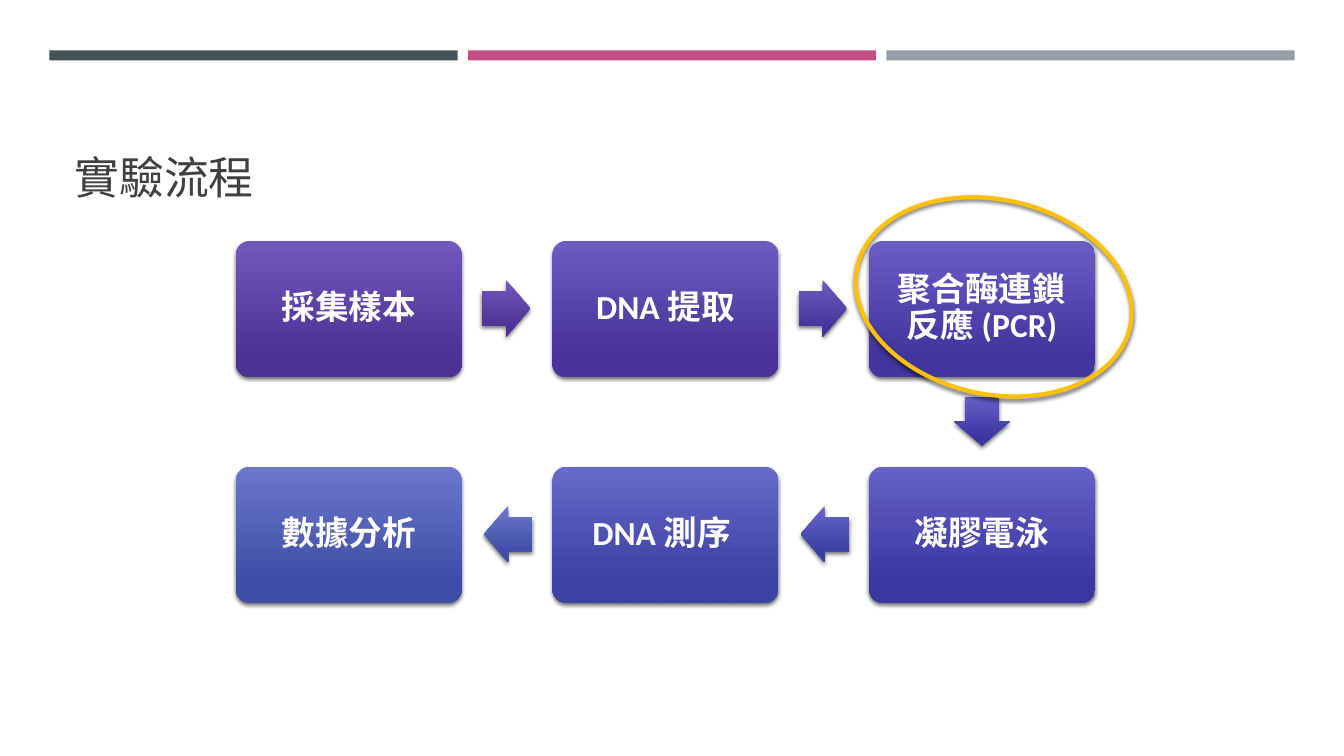
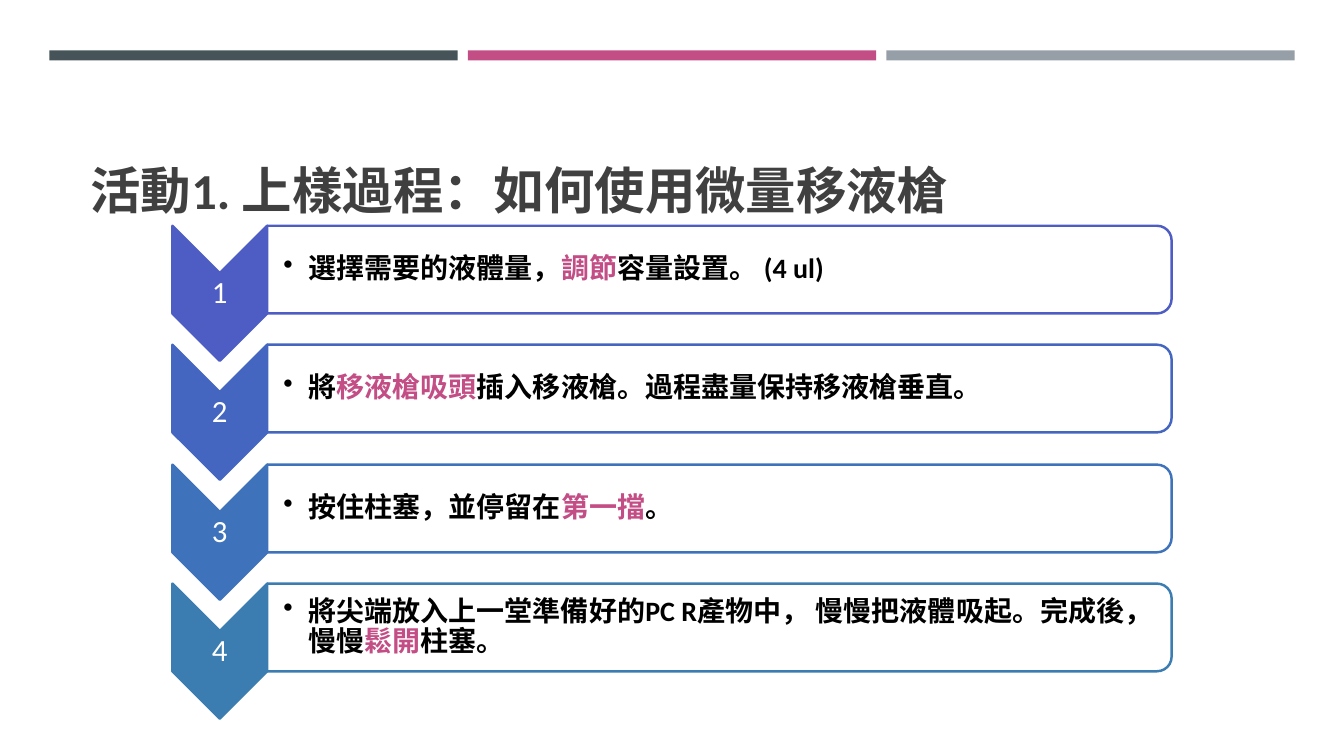
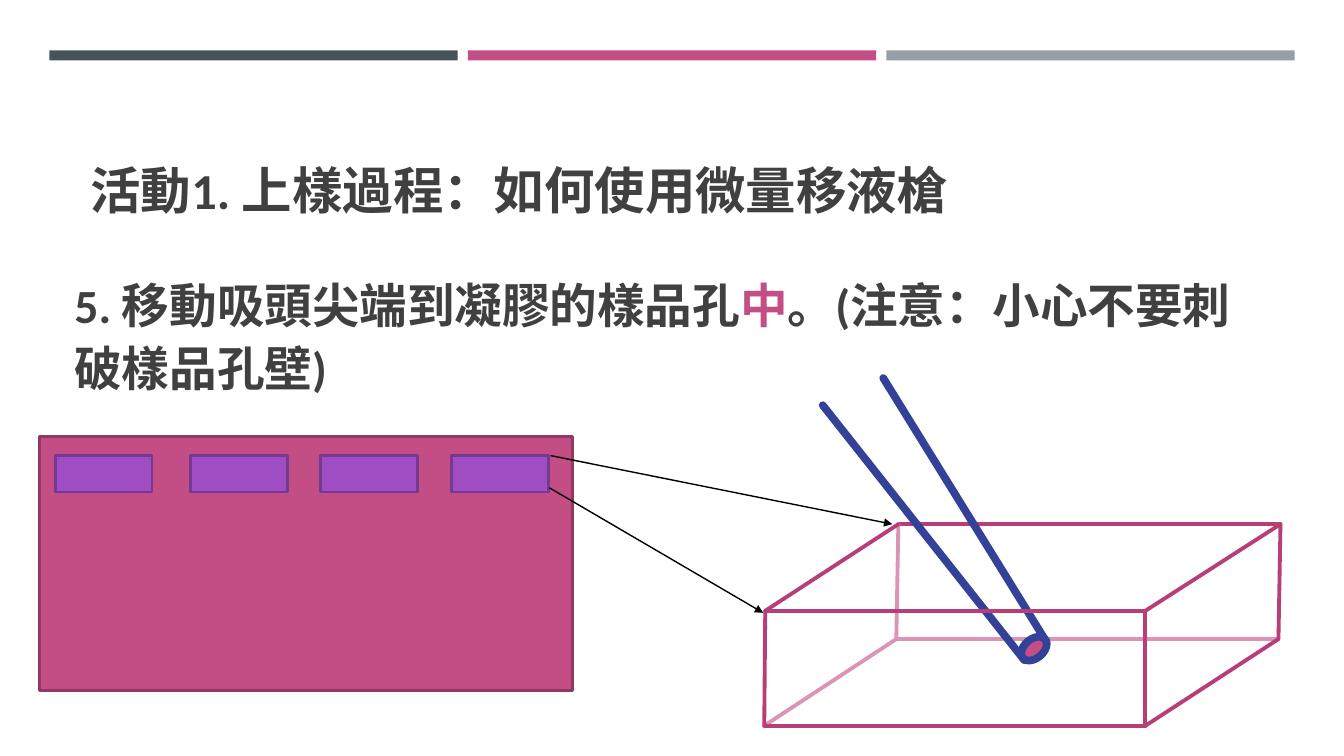
from pptx import Presentation
from pptx.dml.color import RGBColor
from pptx.enum.shapes import MSO_CONNECTOR, MSO_SHAPE
from pptx.enum.text import MSO_ANCHOR, PP_ALIGN
from pptx.oxml import parse_xml
from pptx.oxml.ns import nsdecls, qn
from pptx.util import Pt

PX = 9144  # 100 px to the inch
FONT = "Calibri"

SLATE = RGBColor(0x46, 0x53, 0x59)
PINK = RGBColor(0xC3, 0x4D, 0x85)
GRAY = RGBColor(0x96, 0x9F, 0xA7)
INK = RGBColor(0x40, 0x40, 0x40)
WHITE = RGBColor(0xFF, 0xFF, 0xFF)
BLACK = RGBColor(0x00, 0x00, 0x00)
GOLD = RGBColor(0xFF, 0xC0, 0x00)
EDGE = RGBColor(0xB7, 0x3E, 0x77)
HIDDEN_EDGE = RGBColor(0xDB, 0x94, 0xB6)
TIP_BLUE = RGBColor(0x33, 0x41, 0x99)
GEL_LINE = RGBColor(0x90, 0x39, 0x62)
WELL = RGBColor(0x9F, 0x4D, 0xC3)
WELL_LINE = RGBColor(0x76, 0x39, 0x90)

RECT = MSO_SHAPE.RECTANGLE
OVAL = MSO_SHAPE.OVAL
ROUNDED = MSO_SHAPE.ROUNDED_RECTANGLE
TWO_ROUNDED = MSO_SHAPE.ROUND_2_SAME_RECTANGLE
CHEVRON = MSO_SHAPE.CHEVRON
RIGHT = MSO_SHAPE.RIGHT_ARROW
LEFT = MSO_SHAPE.LEFT_ARROW
DOWN = MSO_SHAPE.DOWN_ARROW
STRAIGHT = MSO_CONNECTOR.STRAIGHT
TOP, MIDDLE, BOTTOM = MSO_ANCHOR.TOP, MSO_ANCHOR.MIDDLE, MSO_ANCHOR.BOTTOM
ALIGN_LEFT, CENTER = PP_ALIGN.LEFT, PP_ALIGN.CENTER

ACTIVITY_TITLE = "活動1. 上樣過程：如何使用微量移液槍"


class Deck:
    def __init__(self):
        self.file = Presentation()
        self.file.slide_width = 1333 * PX
        self.file.slide_height = 750 * PX
        self.page = None

    def new_page(self):
        self.page = self.file.slides.add_slide(self.file.slide_layouts[6])
        for column, color in enumerate((SLATE, PINK, GRAY)):
            self.shape(RECT, 49 + 415 * column, 50, 405, 10, fill=color)

    def title(self, text, x=80, y=93, size=36, bold=True):
        self.text(x, y, 1206, 130, [(text, INK)], size, bold, anchor=BOTTOM)

    def shape(self, kind, x, y, width, height, fill=None, line=None,
              weight=1.75, turn=0, adjust=(), shadow=False):
        """Add a preset shape; a pair of colours as fill runs from top to bottom."""
        shape = self.page.shapes.add_shape(
            kind, x * PX, y * PX, width * PX, height * PX)
        shape.rotation = turn
        for index, value in enumerate(adjust):
            shape.adjustments[index] = value
        if fill is None:
            shape.fill.background()
        elif isinstance(fill, RGBColor):
            shape.fill.solid()
            shape.fill.fore_color.rgb = fill
        else:
            shape.fill.gradient()
            shape.fill.gradient_angle = 270
            for stop, color, position in zip(shape.fill.gradient_stops, fill, (0, 0.84)):
                stop.color.rgb = color
                stop.position = position
        if line is None:
            shape.line.fill.background()
        else:
            shape.line.color.rgb = line
            shape.line.width = Pt(weight)
        shape.shadow.inherit = False
        if shadow:
            effects = shape._element.spPr.find(qn("a:effectLst"))
            effects.append(parse_xml(
                f'<a:outerShdw {nsdecls("a")} blurRad="38100" dist="25400" '
                'dir="5400000" rotWithShape="0"><a:srgbClr val="000000">'
                '<a:alpha val="55000"/></a:srgbClr></a:outerShdw>'))
        return shape

    def label(self, shape, spans, size, bold=False, anchor=MIDDLE, align=ALIGN_LEFT,
              insets=(10, 5, 10, 5), spacing=1.0, bullet=False):
        """Fill a shape with one paragraph made of (text, colour) spans."""
        frame = shape.text_frame
        frame.word_wrap = True
        frame.vertical_anchor = anchor
        (frame.margin_left, frame.margin_top,
         frame.margin_right, frame.margin_bottom) = [inset * PX for inset in insets]
        para = frame.paragraphs[0]
        para.alignment = align
        para.line_spacing = spacing
        if bullet:
            props = para._p.get_or_add_pPr()
            props.set("marL", str(25 * PX))
            props.set("indent", str(-25 * PX))
            props.append(parse_xml(f'<a:buChar {nsdecls("a")} char="•"/>'))
        para.font.name = FONT
        para.font.size = Pt(size)
        para.font.bold = bold
        for words, color in spans:
            span = para.add_run()
            span.text = words
            span.font.color.rgb = color

    def text(self, x, y, width, height, spans, size, bold=False, **style):
        box = self.page.shapes.add_textbox(x * PX, y * PX, width * PX, height * PX)
        self.label(box, spans, size, bold, **style)

    def line(self, start, end, color, weight=2.75, arrow=False):
        points = [value * PX for value in (*start, *end)]
        line = self.page.shapes.add_connector(STRAIGHT, *points)
        line.line.color.rgb = color
        line.line.width = Pt(weight)
        props = line._element.spPr
        outline = props.get_or_add_ln()
        outline.set("cap", "flat" if arrow else "rnd")
        if arrow:
            outline.append(parse_xml(f'<a:tailEnd {nsdecls("a")} type="triangle"/>'))
        props.append(parse_xml(f'<a:effectLst {nsdecls("a")}/>'))


def shades(top, bottom):
    return RGBColor.from_string(top), RGBColor.from_string(bottom)


def workflow_page(deck):
    deck.new_page()
    deck.title("實驗流程", 64, 77, 32, bold=False)
    box_width, box_height, column_step = 224, 135, 314
    arrow_length, arrow_width, gap = 48, 56, 20
    centring = (box_height - arrow_width) // 2
    # column, row, caption, box shades, arrow to the next step, arrow shades
    steps = [
        (0, 0, "採集樣本", shades("7158BC", "4D3295"), RIGHT, shades("7158BC", "4D3295")),
        (1, 0, "DNA 提取", shades("6D5CBF", "473399"), RIGHT, shades("6C5CC1", "46349A")),
        (2, 0, "聚合酶連鎖反應 (PCR)", shades("685EC4", "41359E"), DOWN,
         shades("665FC7", "3D36A0")),
        (2, 1, "凝膠電泳", shades("6461C8", "3B37A1"), LEFT, shades("6568C9", "3B3EA2")),
        (1, 1, "DNA 測序 ", shades("666BCA", "3C41A2"), LEFT, shades("6B77CC", "3F4DA6")),
        (0, 1, "數據分析", shades("6B77CC", "3F4DA6"), None, None),
    ]
    for column, row, caption, box_fill, arrow, arrow_fill in steps:
        x, y = 234 + column_step * column, 239 + 224 * row
        box = deck.shape(ROUNDED, x, y, box_width, box_height, box_fill,
                         adjust=(0.1,), shadow=True)
        deck.label(box, [(caption, WHITE)], 24, bold=True, align=CENTER,
                   insets=(10, 10, 10, 10), spacing=0.9)
        places = {
            RIGHT: (x + box_width + gap, y + centring, arrow_length, arrow_width),
            LEFT: (x - gap - arrow_length, y + centring, arrow_length, arrow_width),
            DOWN: (x + (box_width - arrow_width) // 2, y + box_height + gap,
                   arrow_width, arrow_length),
        }
        if arrow is not None:
            deck.shape(arrow, *places[arrow], arrow_fill, adjust=(0.6, 0.5), shadow=True)
    deck.shape(OVAL, 889, 156, 193, 277, line=GOLD, weight=3, turn=102.4, shadow=True)


def pipette_page(deck):
    deck.new_page()
    steps = [
        (RGBColor(0x4D, 0x5D, 0xC3),
         [("選擇需要的液體量，", BLACK), ("調節", PINK), ("容量設置。 (4 ul)", BLACK)]),
        (RGBColor(0x44, 0x66, 0xC0),
         [("將", BLACK), ("移液槍吸頭", PINK),
          ("插入移液槍。過程盡量保持移液槍垂直。", BLACK)]),
        (RGBColor(0x3E, 0x72, 0xBA),
         [("按住柱塞，並停留在", BLACK), ("第一擋", PINK), ("。", BLACK)]),
        (RGBColor(0x3B, 0x7D, 0xB1),
         [("將尖端放入上一堂準備好的PC R產物中， 慢慢把液體吸起。完成後，慢慢", BLACK),
          ("鬆開", PINK), ("柱塞。", BLACK)]),
    ]
    for index, (color, spans) in enumerate(steps):
        top = 224 + 237 * index // 2
        deck.shape(CHEVRON, 151, top + 20, 134, 94, color, color, turn=90)
        deck.text(171, top + 47, 94, 40, [(str(index + 1), WHITE)], 22,
                  align=CENTER, insets=(2, 2, 2, 2), spacing=0.9)
        deck.shape(TWO_ROUNDED, 670, top - 405, 87, 897, WHITE, color, turn=90)
        deck.text(265, top + 4, 892, 79, spans, 20, bold=True,
                  insets=(16, 1, 1, 1), spacing=0.9, bullet=True)
    deck.title(ACTIVITY_TITLE)


def gel_page(deck):
    deck.new_page()
    # corners of the enlarged well
    back_left, back_right = (891, 520), (1270, 520)
    front_left, front_right = (759, 606), (1136, 606)
    low_back_left, low_back_right = (889, 634), (1268, 634)
    low_front_left, low_front_right = (758, 720), (1136, 720)

    deck.line(back_right, back_left, EDGE)
    deck.line(low_back_right, low_back_left, HIDDEN_EDGE)
    deck.shape(OVAL, 1011, 634, 29, 19, PINK, TIP_BLUE, 5.5, turn=320)
    deck.line((1038, 637), (876, 375), TIP_BLUE, 5.5)
    deck.line((1016, 655), (816, 402), TIP_BLUE, 5.5)
    deck.text(64, 263, 1206, 140,
              [("5. 移動吸頭尖端到凝膠的樣品孔", INK), ("中", PINK),
               ("。(注意：小心不要刺破樣品孔壁)", INK)],
              34, bold=True, anchor=TOP, spacing=1.1)
    for start, end, color in (
        (low_back_left, low_front_left, HIDDEN_EDGE),
        (back_left, low_back_left, HIDDEN_EDGE),
        (back_right, front_right, EDGE),
        (back_left, front_left, EDGE),
        (front_right, front_left, EDGE),
        (low_back_right, low_front_right, EDGE),
        (low_front_right, low_front_left, EDGE),
        (front_right, low_front_right, EDGE),
        (back_right, low_back_right, EDGE),
        (front_left, low_front_left, EDGE),
    ):
        deck.line(start, end, color)

    deck.shape(RECT, 39, 433, 529, 252, PINK, GEL_LINE)
    for x in (55, 189, 318, 448):
        deck.shape(RECT, x, 452, 96, 36, WELL, WELL_LINE)
    deck.line((546, 452), (885, 520), BLACK, 1, arrow=True)
    deck.line((545, 484), (757, 608), BLACK, 1, arrow=True)
    deck.title(ACTIVITY_TITLE)


def main():
    deck = Deck()
    workflow_page(deck)
    pipette_page(deck)
    gel_page(deck)
    deck.file.save("out.pptx")


if __name__ == "__main__":
    main()
